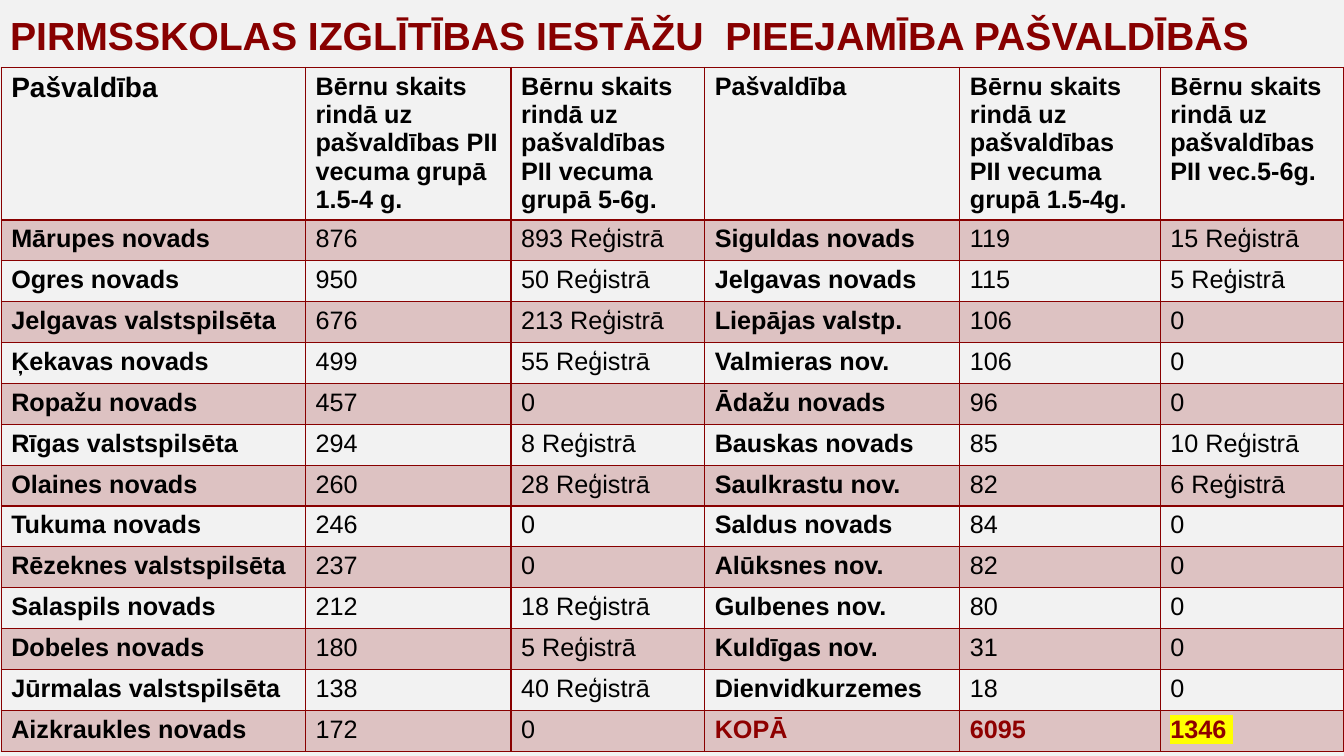
from lxml.etree import SubElement
from pptx import Presentation
from pptx.dml.color import RGBColor
from pptx.enum.text import MSO_ANCHOR, MSO_AUTO_SIZE, PP_ALIGN
from pptx.oxml.ns import qn
from pptx.util import Cm, Pt

TITLE = "PIRMSSKOLAS IZGLĪTĪBAS IESTĀŽU  PIEEJAMĪBA PAŠVALDĪBĀS"
HEADER = (
    "Pašvaldība",
    "Bērnu skaits rindā uz pašvaldības PII vecuma grupā 1.5-4 g.",
    "Bērnu skaits rindā uz pašvaldības PII vecuma grupā 5-6g.",
    "Pašvaldība",
    "Bērnu skaits rindā uz pašvaldības PII vecuma grupā 1.5-4g.",
    "Bērnu skaits rindā uz pašvaldības PII vec.5-6g.",
)
MUNICIPALITIES = [
    ("Mārupes novads", "876", "893 Reģistrā", "Siguldas novads", "119", "15 Reģistrā"),
    ("Ogres novads", "950", "50 Reģistrā", "Jelgavas novads", "115", "5 Reģistrā"),
    ("Jelgavas valstspilsēta", "676", "213 Reģistrā", "Liepājas valstp.", "106", "0"),
    ("Ķekavas novads", "499", "55 Reģistrā", "Valmieras nov.", "106", "0"),
    ("Ropažu novads", "457", "0", "Ādažu novads", "96", "0"),
    ("Rīgas valstspilsēta", "294", "8 Reģistrā", "Bauskas novads", "85", "10 Reģistrā"),
    ("Olaines novads", "260", "28 Reģistrā", "Saulkrastu nov.", "82", "6 Reģistrā"),
    ("Tukuma novads", "246", "0", "Saldus novads", "84", "0"),
    ("Rēzeknes valstspilsēta", "237", "0", "Alūksnes nov.", "82", "0"),
    ("Salaspils novads", "212", "18 Reģistrā", "Gulbenes nov.", "80", "0"),
    ("Dobeles novads", "180", "5 Reģistrā", "Kuldīgas nov.", "31", "0"),
    ("Jūrmalas valstspilsēta", "138", "40 Reģistrā", "Dienvidkurzemes", "18", "0"),
    ("Aizkraukles novads", "172", "0", "KOPĀ", "6095", "1346 "),
]
COLORS = {
    "background": "F2F2F2",
    "accent": "880000",
    "band": "DDC2C2",
    "text": "000000",
    "total": "8E0000",
    "highlight": "FFFF00",
}
COLUMN_WIDTHS = (7.67, 5.18, 4.88, 6.43, 5.05, 4.62)
HEADER_HEIGHT = 3.84
ROW_HEIGHT = 1.03
NAME_COLUMNS = (0, 3)


def color(name):
    return RGBColor.from_string(COLORS[name])


def write(frame, text, size, color_name, bold):
    para = frame.paragraphs[0]
    span = para.add_run()
    span.text = text
    for key, value in {"name": "Arial", "size": Pt(size), "bold": bold}.items():
        setattr(span.font, key, value)
    span.font.color.rgb = color(color_name)
    return para, span


def add_borders(cell, widths):
    properties = cell._tc.get_or_add_tcPr()
    for side, width in widths.items():
        line = SubElement(properties, qn(f"a:ln{side}"), w=str(Pt(width)))
        fill = SubElement(line, qn("a:solidFill"))
        SubElement(fill, qn("a:srgbClr"), val=COLORS["accent"])


def add_highlight(span):
    mark = SubElement(span._r.rPr, qn("a:highlight"))
    SubElement(mark, qn("a:srgbClr"), val=COLORS["highlight"])
    span._r.rPr.find(qn("a:solidFill")).addnext(mark)


def add_title(page):
    title = page.shapes.title
    box = {"left": Cm(0), "top": Cm(0.28), "width": Cm(33.05), "height": Cm(2.11)}
    for key, value in box.items():
        setattr(title, key, value)
    frame = title.text_frame
    settings = {
        "auto_size": MSO_AUTO_SIZE.NONE,
        "vertical_anchor": MSO_ANCHOR.TOP,
        "word_wrap": True,
    }
    for key, value in settings.items():
        setattr(frame, key, value)
    para, span = write(frame, TITLE, 28, "accent", True)
    para.alignment = PP_ALIGN.LEFT
    para.line_spacing = 0.9


def add_queue_table(page):
    rows = [HEADER] + MUNICIPALITIES
    last_row, last_column = len(rows) - 1, len(HEADER) - 1
    heights = [HEADER_HEIGHT] + [ROW_HEIGHT] * last_row
    table = page.shapes.add_table(
        len(rows), len(HEADER), Cm(0.03), Cm(1.7),
        Cm(sum(COLUMN_WIDTHS)), Cm(sum(heights)),
    ).table
    table.first_row = table.horz_banding = False
    for column, width in zip(table.columns, COLUMN_WIDTHS):
        column.width = Cm(width)
    for row, height in zip(table.rows, heights):
        row.height = Cm(height)

    for r, texts in enumerate(rows):
        for c, text in enumerate(texts):
            cell = table.cell(r, c)
            is_total = r == last_row and c >= 3
            size = 20 if r == c == 0 else 18
            bold = r == 0 or c in NAME_COLUMNS or is_total
            color_name = "total" if is_total else "text"
            para, span = write(cell.text_frame, text, size, color_name, bold)
            if is_total and c == last_column:
                add_highlight(span)
            add_borders(cell, {
                "L": 1, "R": 1, "T": 2 if r == 1 else 1, "B": 2 if r == 0 else 1,
            })
            if r % 2:
                cell.fill.solid()
                cell.fill.fore_color.rgb = color("band")
            else:
                cell.fill.background()


def main():
    deck = Presentation()
    deck.slide_width, deck.slide_height = Cm(33.87), Cm(19.05)
    page = deck.slides.add_slide(deck.slide_layouts[5])
    page.background.fill.solid()
    page.background.fill.fore_color.rgb = color("background")
    add_title(page)
    add_queue_table(page)
    deck.save("out.pptx")


if __name__ == "__main__":
    main()
